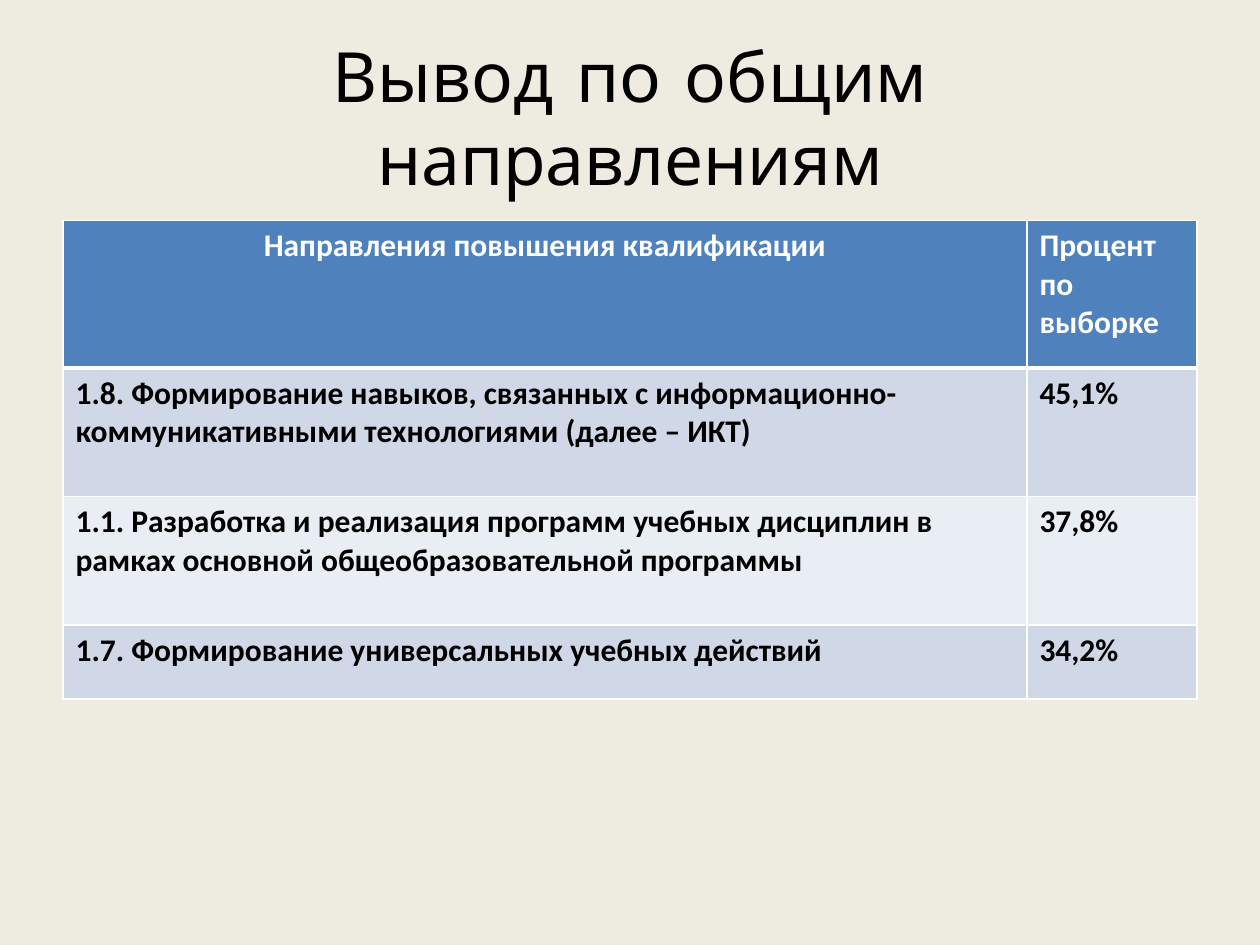
from lxml import etree
from pptx import Presentation
from pptx.dml.color import RGBColor
from pptx.enum.text import MSO_ANCHOR, PP_ALIGN
from pptx.oxml.ns import qn
from pptx.util import Inches, Pt

SLIDE_W, SLIDE_H = Inches(10), Inches(7.5)
MARGIN = 0.05 * SLIDE_W
CONTENT_W = SLIDE_W - 2 * MARGIN
COLUMN_SHARES = (0.85, 0.15)
ROW_HEIGHTS = (1.17, 1.02, 1.02, 0.59)
HEADER_FILL, BAND_FILLS = "4F81BD", ("D0D8E8", "E9EDF4")
WHITE, BLACK = "FFFFFF", "000000"

HEADINGS = ("Направления повышения квалификации", "Процент по выборке")
DIRECTIONS = (
    ("1.8. Формирование навыков, связанных с информационно-коммуникативными "
     "технологиями (далее – ИКТ)", "45,1%"),
    ("1.1. Разработка и реализация программ учебных дисциплин в рамках "
     "основной общеобразовательной программы", "37,8%"),
    ("1.7. Формирование универсальных учебных действий", "34,2%"),
)


def colour(hex_code):
    return RGBColor.from_string(hex_code)


def format_text(frame, font_name, size, hex_code, bold=False):
    for paragraph in frame.paragraphs:
        for run in paragraph.runs:
            run.font.name = font_name
            run.font.size = Pt(size)
            run.font.bold = bold
            run.font.color.rgb = colour(hex_code)


def add_borders(cell, top, bottom):
    """Draw white cell edges; top and bottom are widths in points."""
    properties = cell._tc.get_or_add_tcPr()
    for side, width in (("L", 1), ("R", 1), ("T", top), ("B", bottom)):
        line = etree.SubElement(properties, qn(f"a:ln{side}"), w=str(Pt(width)))
        fill = etree.SubElement(line, qn("a:solidFill"))
        etree.SubElement(fill, qn("a:srgbClr"), val=WHITE)


def place_title(slide, left, top, width, height):
    title = slide.shapes.title
    title.left, title.top = int(left), int(top)
    title.width, title.height = int(width), int(height)
    frame = title.text_frame
    frame.text = "Вывод по общим направлениям"
    frame.word_wrap = True
    frame.vertical_anchor = MSO_ANCHOR.MIDDLE
    frame.paragraphs[0].alignment = PP_ALIGN.CENTER
    format_text(frame, "Comic Neue", 39.6, BLACK)


def place_directions(slide, left, top, width):
    entries = (HEADINGS, *DIRECTIONS)
    height = Inches(sum(ROW_HEIGHTS))
    table = slide.shapes.add_table(len(entries), len(HEADINGS), int(left),
                                   int(top), int(width), height).table
    for column, share in zip(table.columns, COLUMN_SHARES):
        column.width = int(share * width)
    for row, row_height in zip(table.rows, ROW_HEIGHTS):
        row.height = Inches(row_height)

    for r, entry in enumerate(entries):
        is_header = r == 0
        row_fill = HEADER_FILL if is_header else BAND_FILLS[(r - 1) % 2]
        for c, text in enumerate(entry):
            cell = table.cell(r, c)
            cell.text = text
            add_borders(cell, 3 if r == 1 else 1, 3 if is_header else 1)
            cell.fill.solid()
            cell.fill.fore_color.rgb = colour(row_fill)
            format_text(cell.text_frame, "Calibri", 18,
                        WHITE if is_header else BLACK, bold=True)
    table.cell(0, 0).text_frame.paragraphs[0].alignment = PP_ALIGN.CENTER


def main():
    deck = Presentation()
    deck.slide_width, deck.slide_height = SLIDE_W, SLIDE_H
    slide = deck.slides.add_slide(deck.slide_layouts[5])
    slide.background.fill.solid()
    slide.background.fill.fore_color.rgb = colour("EEECE1")
    place_title(slide, MARGIN, 0.04 * SLIDE_H, CONTENT_W, SLIDE_H / 6)
    place_directions(slide, MARGIN, SLIDE_H * 7 / 30, CONTENT_W)
    deck.save("out.pptx")


if __name__ == "__main__":
    main()
